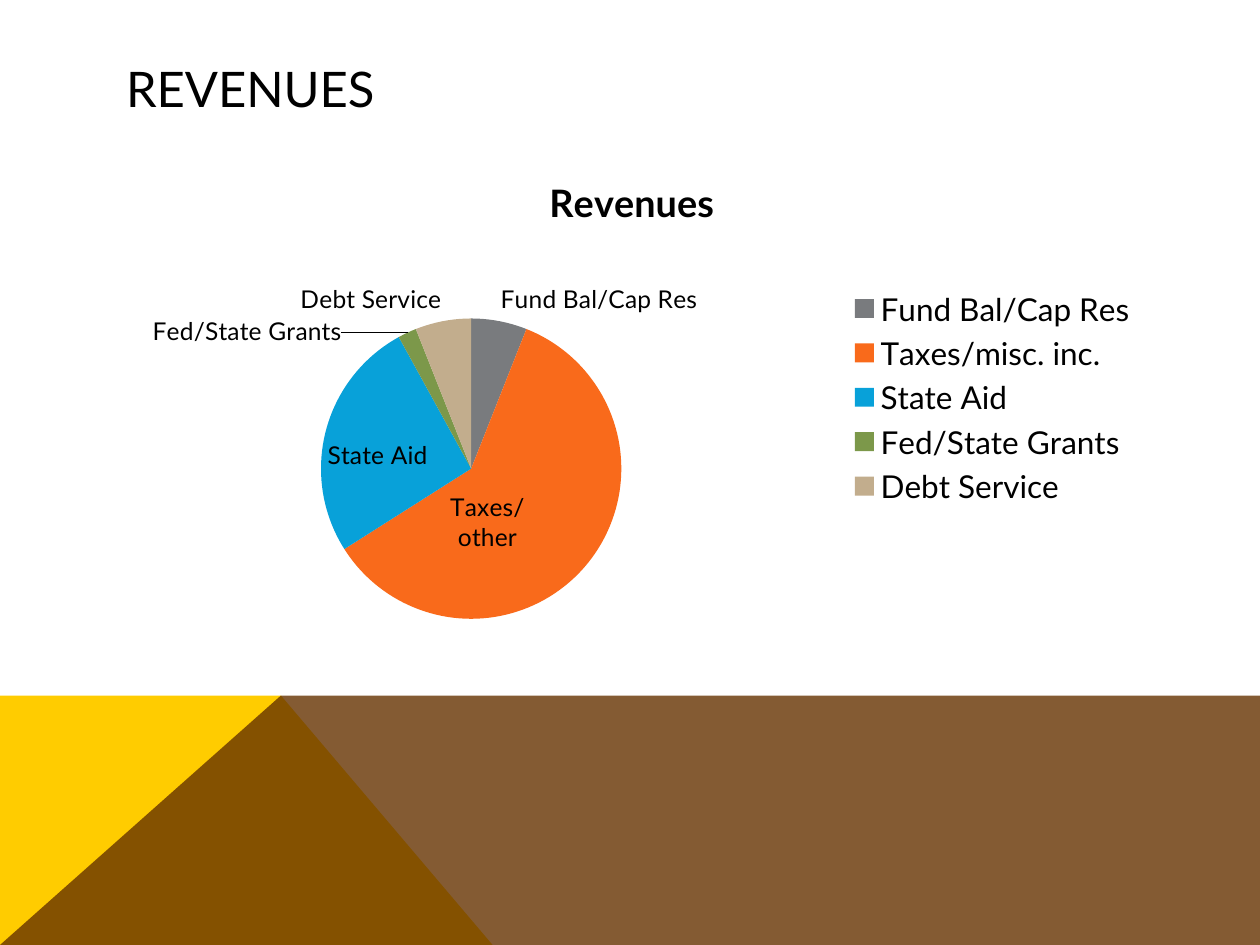
from dataclasses import dataclass

from lxml import etree
from pptx import Presentation, util as u
from pptx.chart.data import CategoryChartData
from pptx.dml.color import RGBColor
from pptx.enum import chart as ch, text as tx
from pptx.oxml import parse_xml
from pptx.oxml.ns import nsdecls, qn


@dataclass(frozen=True)
class Theme:
    font: str = "Lato"
    ink: str = "000000"
    gold: str = "FFCC00"
    brown: str = "663300"
    slices: tuple = ("797B7E", "F96A1B", "08A1D9", "7C984A", "C2AD8D")
    head: float = 28
    title: float = 21.6
    body: float = 18
    label: float = 14


THEME = Theme()
WIDE, HIGH = u.Inches(10), u.Inches(7.5)
REVENUES = {
    "Fund Bal/Cap Res": 6,
    "Taxes/misc. inc.": 60,
    "State Aid": 26,
    "Fed/State Grants": 2,
    "Debt Service": 6,
}
# Slice number: own wording, place, and shift as shares of the chart
LABELS = {
    1: ("Taxes/other", ch.XL_LABEL_POSITION.CENTER, -0.04, 0.01),
    2: (None, ch.XL_LABEL_POSITION.CENTER, -0.02, 0.01),
    3: (None, ch.XL_LABEL_POSITION.OUTSIDE_END, -0.06, 0.04),
}


def place(x, y):
    """Turn shares of the slide into lengths."""
    return round(WIDE * x), round(HIGH * y)


def style(font, size, bold=False, color=THEME.ink):
    font.name, font.size, font.bold = THEME.font, u.Pt(size), bold
    font.color.rgb = RGBColor.from_string(color)


def write(frame, text, align=None, **form):
    para = frame.paragraphs[0]
    para.alignment = align
    run = para.add_run()
    run.text = text
    style(run.font, **form)


def add_band(slide, points, color, alpha=None):
    """Draw a plain polygon from slide shares; alpha is a percentage."""
    spots = [place(*point) for point in points]
    pen = slide.shapes.build_freeform(*spots[0])
    pen.add_line_segments(spots[1:], close=True)
    band = pen.convert_to_shape()
    band.shadow.inherit = False
    band.line.fill.background()
    band.fill.solid()
    band.fill.fore_color.rgb = RGBColor.from_string(color)
    if alpha:
        tint = band.fill._xPr.find(".//" + qn("a:srgbClr"))
        etree.SubElement(tint, qn("a:alpha"), val=str(alpha * 1000))


def add_head(slide, text):
    head = slide.shapes.title
    head.left, head.top = place(0.09, 0.053)
    head.width, head.height = place(0.822, 0.08)
    frame = head.text_frame
    frame.vertical_anchor = tx.MSO_ANCHOR.MIDDLE
    write(frame, text, align=tx.PP_ALIGN.LEFT, size=THEME.head)


def layout(target="", **shares):
    """Build a manual chart layout from x, y, w and h shares."""
    inner = f'<c:layoutTarget val="{target}"/>' if target else ""
    if target:
        inner += '<c:xMode val="edge"/><c:yMode val="edge"/>'
    inner += "".join(f'<c:{k} val="{v}"/>' for k, v in shares.items())
    return parse_xml(f'<c:layout {nsdecls("c")}><c:manualLayout>{inner}'
                     "</c:manualLayout></c:layout>")


def set_labels(series):
    tags = series.data_labels
    tags.show_category_name, tags.show_value = True, False
    style(tags.font, THEME.label)
    for num, (text, spot, x, y) in LABELS.items():
        tag = series.points[num].data_label
        if text:
            write(tag.text_frame, text, size=THEME.label)
        else:
            style(tag.font, THEME.label)
        tag.position = spot
        node = series._element.xpath(f'.//c:dLbl[c:idx/@val="{num}"]')[0]
        node.find(qn("c:showVal")).set("val", "0")
        node.find(qn("c:showCatName")).set("val", "1")
        node.find(qn("c:idx")).addnext(layout(x=x, y=y))


def add_pie(slide, name, values):
    data = CategoryChartData()
    data.categories = list(values)
    data.add_series(name, list(values.values()))
    chart = slide.shapes.add_chart(
        ch.XL_CHART_TYPE.PIE, *place(0.09, 0.16), *place(0.823, 0.521), data
    ).chart
    style(chart.font, THEME.body)
    chart.has_title = chart.has_legend = True
    write(chart.chart_title.text_frame, name, size=THEME.title, bold=True)
    chart.legend.position = ch.XL_LEGEND_POSITION.RIGHT
    chart.legend.include_in_layout = False
    style(chart.legend.font, THEME.body)

    plot = chart.plots[0]
    plot.vary_by_categories = True
    series = plot.series[0]
    for num, color in enumerate(THEME.slices):
        fill = series.points[num].format.fill
        fill.solid()
        fill.fore_color.rgb = RGBColor.from_string(color)
    set_labels(series)

    area = chart._chartSpace.find(".//" + qn("c:plotArea"))
    for old in area.findall(qn("c:layout")):
        area.remove(old)
    area.insert(0, layout("inner", x=0.2, y=0.34, w=0.29, h=0.61))


def main():
    deck = Presentation()
    deck.slide_width, deck.slide_height = WIDE, HIGH
    slide = deck.slides.add_slide(deck.slide_layouts[5])
    top, peak = 0.736, 0.223
    add_band(slide, [(0, 1), (0, top), (peak, top), (0.391, 1)], THEME.gold)
    add_band(slide, [(0, 1), (peak, top), (1, top), (1, 1)],
             THEME.brown, alpha=80)
    add_head(slide, "REVENUES")
    add_pie(slide, "Revenues", REVENUES)
    deck.save("out.pptx")


if __name__ == "__main__":
    main()
